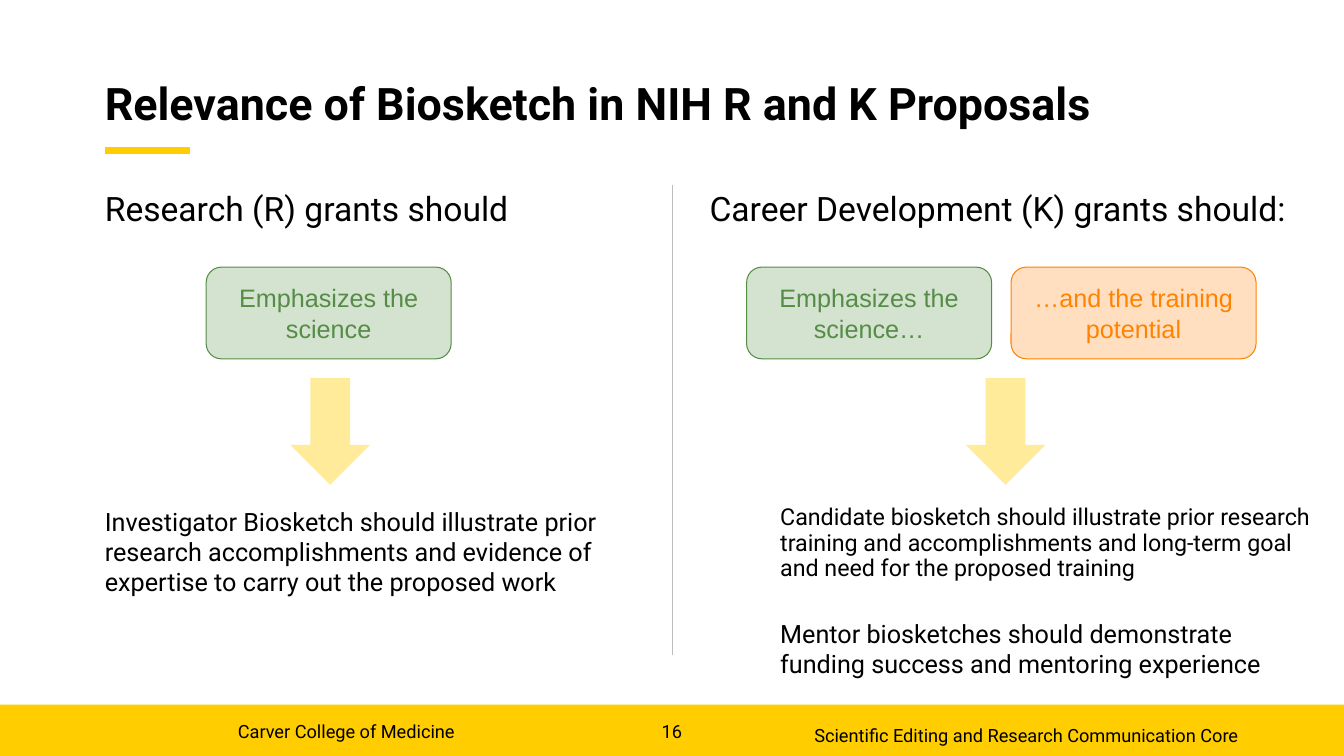
from lxml.etree import SubElement
from pptx import Presentation
from pptx.dml.color import RGBColor
from pptx.enum.shapes import MSO_CONNECTOR as Connector, MSO_SHAPE as Shape
from pptx.enum.text import MSO_ANCHOR as Anchor, PP_ALIGN as Align
from pptx.oxml.ns import qn
from pptx.util import Pt

GOLD, PALE_GOLD, GREY = "FFCD00", "FFEB99", "BBBCBC"
GREEN, ORANGE, BLACK = "558C46", "FF8200", "000000"
LEFT, RIGHT = 74.9, 506.9
CALLOUT_TOP, ARROW_TOP, DETAIL_TOP = 190.8, 270, 361.4


def color(hex_string):
    """Turn a hex string into a colour."""
    return RGBColor.from_string(hex_string)


def write(shape, text, size, font="Roboto", ink=BLACK, bold=False,
          align=Align.LEFT, anchor=Anchor.TOP, spacing=None, wrap=True, margin=0):
    """Write one formatted paragraph into a shape."""
    frame = shape.text_frame
    frame.word_wrap = wrap
    frame.vertical_anchor = anchor
    frame.margin_left = frame.margin_right = Pt(margin)
    frame.margin_top = frame.margin_bottom = Pt(margin / 2)
    paragraph = frame.paragraphs[0]
    paragraph.alignment = align
    paragraph.space_before = Pt(0)
    if spacing:
        paragraph.line_spacing = spacing
    run = paragraph.add_run()
    run.text = text
    run.font.name = font
    run.font.size = Pt(size)
    run.font.bold = bold
    run.font.color.rgb = color(ink)


def add_title(slide, text):
    """Place and fill the title placeholder."""
    title = slide.shapes.title
    title.left, title.top, title.width, title.height = Pt(LEFT), Pt(41.8), Pt(810), Pt(68.4)
    write(title, text, 32, bold=True, anchor=Anchor.MIDDLE, spacing=0.9)


def add_text(slide, left, top, width, height, text, size, **style):
    """Add a text box."""
    box = slide.shapes.add_textbox(Pt(left), Pt(top), Pt(width), Pt(height))
    write(box, text, size, **style)


def add_block(slide, kind, left, top, width, height, fill):
    """Add a flat filled shape without an outline."""
    shape = slide.shapes.add_shape(kind, Pt(left), Pt(top), Pt(width), Pt(height))
    shape.shadow.inherit = False
    shape.fill.solid()
    shape.fill.fore_color.rgb = color(fill)
    shape.line.fill.background()
    return shape


def add_callout(slide, left, text, hue):
    """Add a rounded callout with a translucent fill."""
    callout = add_block(slide, Shape.ROUNDED_RECTANGULAR_CALLOUT,
                        left, CALLOUT_TOP, 175, 65.5, hue)
    for index, value in enumerate((-0.5, -0.224, 0.167)):
        callout.adjustments[index] = value
    fill = callout.fill._xPr.find(qn("a:solidFill"))
    SubElement(fill[0], qn("a:alpha"), val="25000")
    callout.line.color.rgb = color(hue)
    callout.line.width = Pt(0.75)
    write(callout, text, 18, font="Arial", ink=hue, align=Align.CENTER,
          anchor=Anchor.MIDDLE, margin=7.2)


def add_rule(slide, start, end, hue, width):
    """Add a straight line."""
    rule = slide.shapes.add_connector(Connector.STRAIGHT, *map(Pt, start + end))
    rule.line.color.rgb = color(hue)
    rule.line.width = Pt(width)
    SubElement(rule._element.spPr, qn("a:effectLst"))


def add_footer(slide):
    """Add the gold band with its three labels."""
    add_block(slide, Shape.RECTANGLE, 0, 503.3, 960, 36.7, GOLD)
    add_text(slide, 456.5, 514.8, 46.8, 18.7, "16", 13, align=Align.CENTER)
    add_text(slide, 169.9, 514.8, 227.5, 25.2, "Carver College of Medicine", 13, wrap=False)
    add_text(slide, 386, 515.5, 498.2, 18.7,
             "Scientific Editing and Research Communication Core", 13,
             align=Align.RIGHT, anchor=Anchor.MIDDLE)


def main():
    """Build the slide and save it."""
    presentation = Presentation()
    presentation.slide_width, presentation.slide_height = Pt(960), Pt(540)
    slide = presentation.slides.add_slide(presentation.slide_layouts[5])
    add_footer(slide)
    add_rule(slide, (LEFT, 107.5), (135.4, 107.5), GOLD, 5)
    add_rule(slide, (480, 132.5), (480, 468), GREY, 0.5)
    add_title(slide, "Relevance of Biosketch in NIH R and K Proposals")

    for left, width, heading in ((LEFT, 378, "Research (R) grants should"),
                                 (RIGHT, 417, "Career Development (K) grants should:")):
        add_text(slide, left, 103, width, 59.8, heading, 24, anchor=Anchor.BOTTOM)

    for left, text, hue in ((147.3, "Emphasizes the science", GREEN),
                            (722.2, "…and the training potential", ORANGE),
                            (533.3, "Emphasizes the science…", GREEN)):
        add_callout(slide, left, text, hue)

    for left in (207.4, 689.8):
        add_block(slide, Shape.DOWN_ARROW, left, ARROW_TOP, 56.9, 76.3, PALE_GOLD)

    details = (
        (LEFT, DETAIL_TOP, 18, None,
         "Investigator Biosketch should illustrate prior research accomplishments "
         "and evidence of expertise to carry out the proposed work"),
        (557.3, DETAIL_TOP, 16.6, 0.9,
         "Candidate biosketch should illustrate prior research training and "
         "accomplishments and long-term goal and need for the proposed training"),
        (557.3, 441.4, 18, None,
         "Mentor biosketches should demonstrate funding success and mentoring experience"),
    )
    for left, top, size, spacing, text in details:
        add_text(slide, left, top, 378, 59.8, text, size, spacing=spacing)

    presentation.save("out.pptx")


if __name__ == "__main__":
    main()
